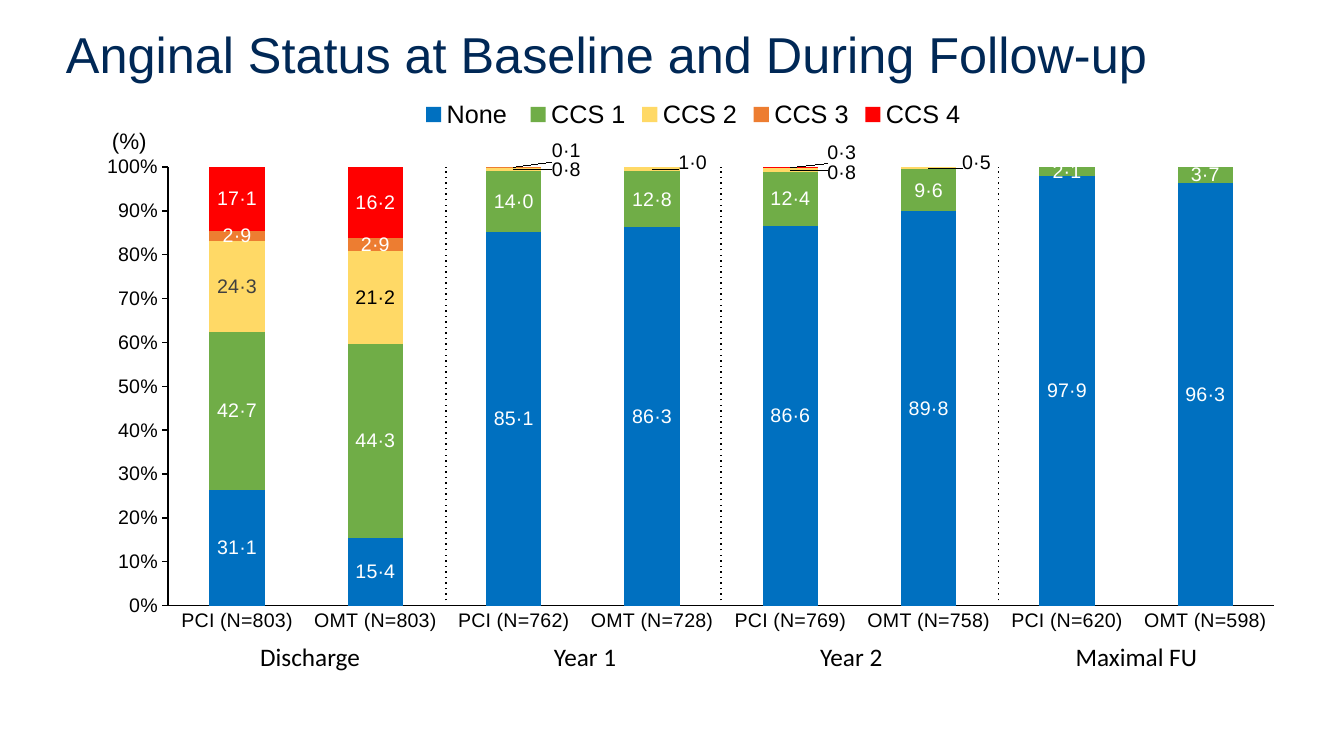
import pptx
import pptx.chart.data
import pptx.dml.color
import pptx.enum.chart
import pptx.enum.shapes
import pptx.enum.text
import pptx.oxml
import pptx.oxml.ns
import pptx.util

SCALE = 914400 / 100.8
BLACK, WHITE, GREY = "000000", "FFFFFF", "404040"
ALIGN = pptx.enum.text.PP_ALIGN
ENUM = pptx.enum.chart

ARMS = ["PCI (N=803)", "OMT (N=803)", "PCI (N=762)", "OMT (N=728)",
        "PCI (N=769)", "OMT (N=758)", "PCI (N=620)", "OMT (N=598)"]
# Name, fill, label colour, values
GRADES = [
    ("None ", "0070C0", WHITE, [31.1, 15.4, 85.1, 86.3, 86.6, 89.8, 97.9, 96.3]),
    ("CCS 1", "70AD47", WHITE, [42.7, 44.3, 14.0, 12.8, 12.4, 9.6, 2.1, 3.7]),
    ("CCS 2", "FFD966", BLACK, [24.3, 21.2, 0.8, 1.0, 0.8, 0.5, None, None]),
    ("CCS 3", "ED7D31", WHITE, [2.9, 2.9, 0.1] + [None] * 5),
    ("CCS 4", "FF0000", WHITE, [17.1, 16.2, None, None, 0.3] + [None] * 3),
]
# Labels beside their bars: (grade, arm) to a shift in px
SHIFTS = {("CCS 2", 2): (53, 0), ("CCS 2", 3): (41, -6),
          ("CCS 2", 4): (52, 2), ("CCS 2", 5): (48, -5),
          ("CCS 3", 2): (53, -16), ("CCS 4", 4): (52, -15)}
TINTS = {("CCS 2", 0): GREY}
CHART = (95, 88, 1196, 561)
VISITS = [("Discharge", 310), ("Year 1", 585), ("Year 2", 851), ("Maximal FU", 1136)]
BREAKS = [446, 721, 998]


def px(n):
    return pptx.util.Emu(round(n * SCALE))


def color(code):
    return pptx.dml.color.RGBColor.from_string(code)


def style(font, size, tint=BLACK, face="Arial"):
    font.size = pptx.util.Pt(size)
    font.name = face
    font.color.rgb = color(tint)


def write(frame, text, size=14, tint=BLACK, face="Arial", align=None, lead=None):
    para = frame.paragraphs[0]
    para.alignment = align
    if lead:
        para.line_spacing = lead
    run = para.add_run()
    run.text = text
    style(run.font, size, tint, face)


def box(slide, left, top, width, height, text, middle=False, **fmt):
    frame = slide.shapes.add_textbox(px(left), px(top), px(width), px(height)).text_frame
    frame.word_wrap = True
    if middle:
        frame.vertical_anchor = pptx.enum.text.MSO_ANCHOR.MIDDLE
    write(frame, text, **fmt)


def rule(slide, x, top, bottom):
    line = slide.shapes.add_connector(
        pptx.enum.shapes.MSO_CONNECTOR.STRAIGHT, px(x), px(bottom), px(x), px(top))
    line.line.color.rgb = color(BLACK)
    line.line.width = pptx.util.Pt(1)
    dash = pptx.oxml.ns.qn("a:prstDash")
    line.line._get_or_add_ln().makeelement(dash)
    ln = line.element.spPr.find(pptx.oxml.ns.qn("a:ln"))
    ln.append(ln.makeelement(dash, {"val": "dot"}))
    props = line.element.spPr
    props.append(props.makeelement(pptx.oxml.ns.qn("a:effectLst")))


def place(node, spot, **parts):
    """Give a chart part a manual layout as its child number spot."""
    for old in node.findall(pptx.oxml.ns.qn("c:layout")):
        node.remove(old)
    body = "".join(f'<c:{key} val="{val}"/>' for key, val in parts.items())
    node.insert(spot, pptx.oxml.parse_xml(
        f'<c:layout {pptx.oxml.ns.nsdecls("c")}>'
        f'<c:manualLayout>{body}</c:manualLayout></c:layout>'))


def axis(part, tick):
    part.has_major_gridlines = False
    part.major_tick_mark = tick
    part.minor_tick_mark = ENUM.XL_TICK_MARK.NONE
    part.format.line.color.rgb = color(BLACK)
    part.format.line.width = pptx.util.Pt(1)
    style(part.tick_labels.font, 14)


def label(bars, name, tint, vals):
    tags = bars.data_labels
    tags.show_value = True
    tags.position = ENUM.XL_LABEL_POSITION.CENTER
    style(tags.font, 14, tint)
    for i, val in enumerate(vals):
        if val is None:
            continue
        key = (name, i)
        shade = BLACK if key in SHIFTS or key == ("CCS 2", 1) else TINTS.get(key, tint)
        tag = bars.points[i].data_label
        write(tag.text_frame, f"{val:.1f}".replace(".", "·"), tint=shade)
        tag.position = ENUM.XL_LABEL_POSITION.CENTER
        if key in SHIFTS:
            dx, dy = SHIFTS[key]
            node = bars._element.xpath(f"c:dLbls/c:dLbl[c:idx/@val={i}]")[0]
            place(node, 1, x=round(dx / CHART[2], 3), y=round(dy / CHART[3], 3))


def graph(slide):
    data = pptx.chart.data.CategoryChartData()
    data.categories = ARMS
    for name, fill, tint, vals in GRADES:
        data.add_series(name, vals)
    chart = slide.shapes.add_chart(
        ENUM.XL_CHART_TYPE.COLUMN_STACKED_100, *map(px, CHART), data).chart
    style(chart.font, 10)
    chart.has_title = False

    # Legend
    chart.has_legend = True
    chart.legend.position = ENUM.XL_LEGEND_POSITION.TOP
    chart.legend.include_in_layout = False
    style(chart.legend.font, 18)

    # Axes
    axis(chart.category_axis, ENUM.XL_TICK_MARK.NONE)
    scale = chart.value_axis
    axis(scale, ENUM.XL_TICK_MARK.OUTSIDE)
    scale.minimum_scale, scale.maximum_scale, scale.major_unit = 0, 1, 0.1
    scale.tick_labels.number_format = "0%"
    scale.tick_labels.number_format_is_linked = False

    # Bars
    plot = chart.plots[0]
    plot.gap_width, plot.overlap, plot.vary_by_categories = 150, 100, False
    for bars, (name, fill, tint, vals) in zip(plot.series, GRADES):
        bars.format.fill.solid()
        bars.format.fill.fore_color.rgb = color(fill)
        label(bars, name, tint, vals)
    area = chart.element.xpath(".//c:plotArea")[0]
    place(area, 0, layoutTarget="inner", xMode="edge", yMode="edge",
          x=0.061, y=0.141, w=0.925, h=0.782)


def main():
    deck = pptx.Presentation()
    deck.slide_width = pptx.util.Inches(13.33)
    deck.slide_height = pptx.util.Inches(7.5)
    slide = deck.slides.add_slide(deck.slide_layouts[6])

    # Heading and unit
    box(slide, 56, 21, 1246, 73, "Anginal Status at Baseline and During Follow-up",
        middle=True, size=36, tint="002856", lead=0.9)
    box(slide, 102, 122, 55, 37, "(%)", size=16)

    # Chart with its visits
    graph(slide)
    for visit, mid in VISITS:
        box(slide, mid - 100, 636, 200, 40, visit, size=18, face="Calibri",
            align=ALIGN.CENTER)
    for x in BREAKS:
        rule(slide, x, 167, 606)

    deck.save("out.pptx")


if __name__ == "__main__":
    main()
